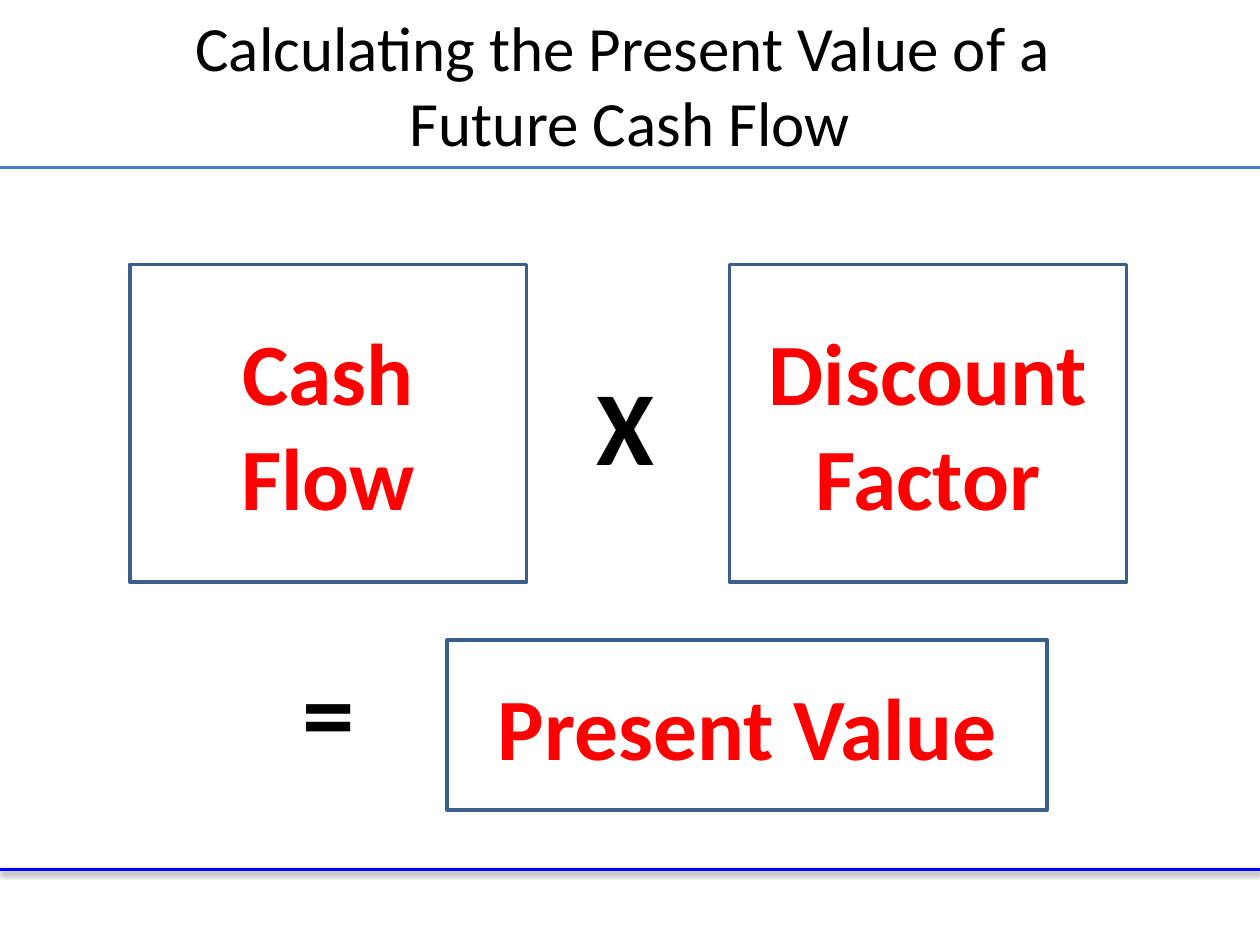
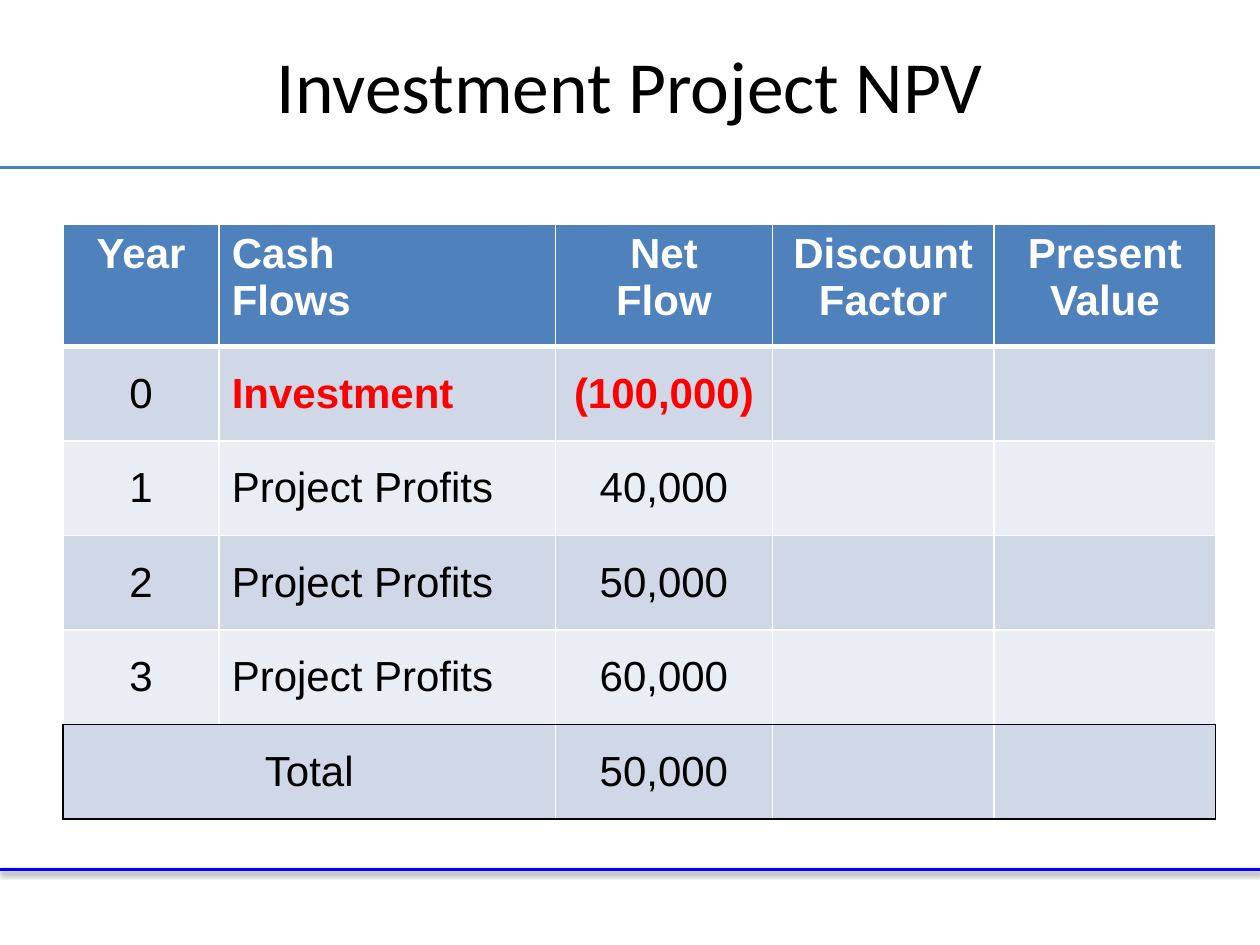
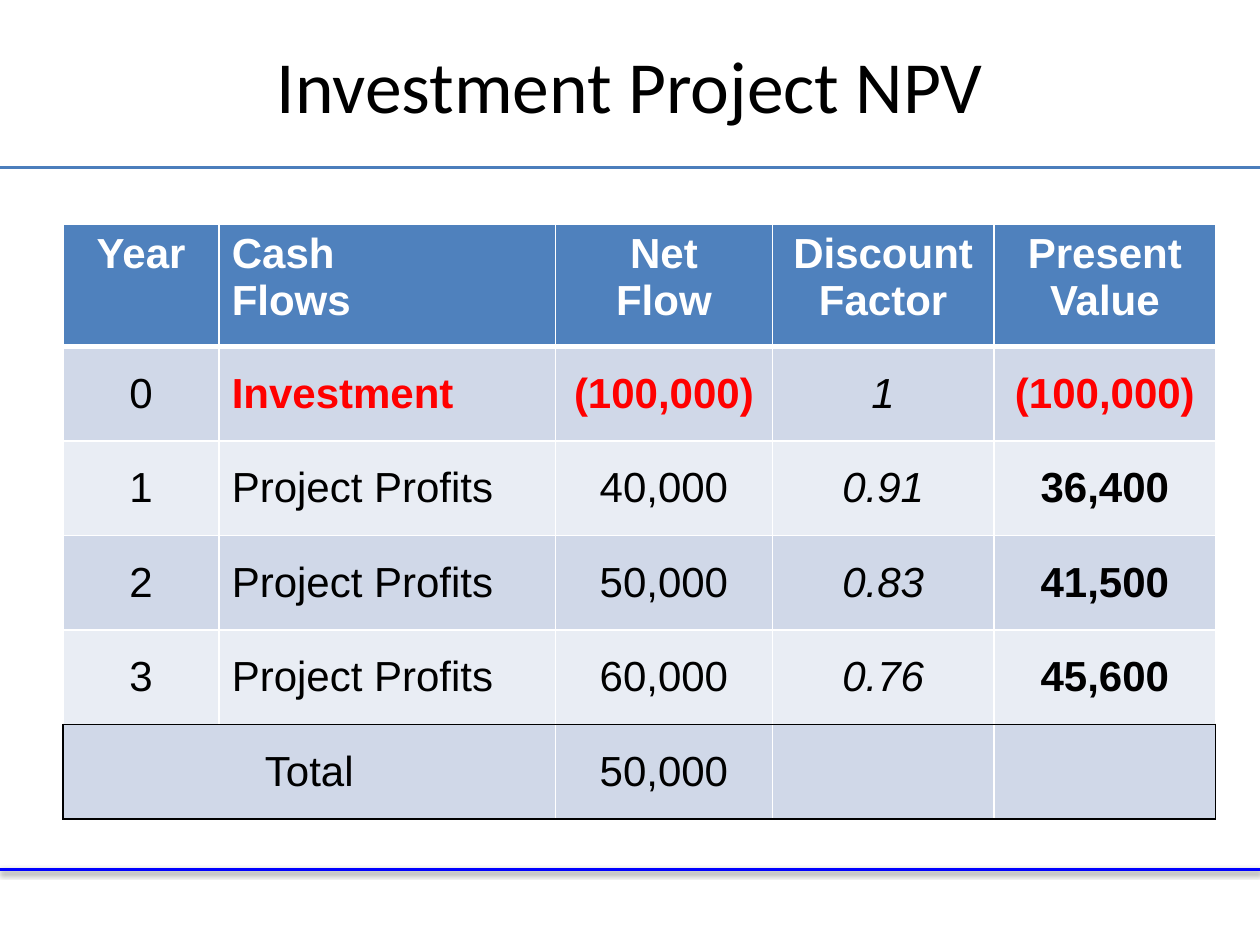
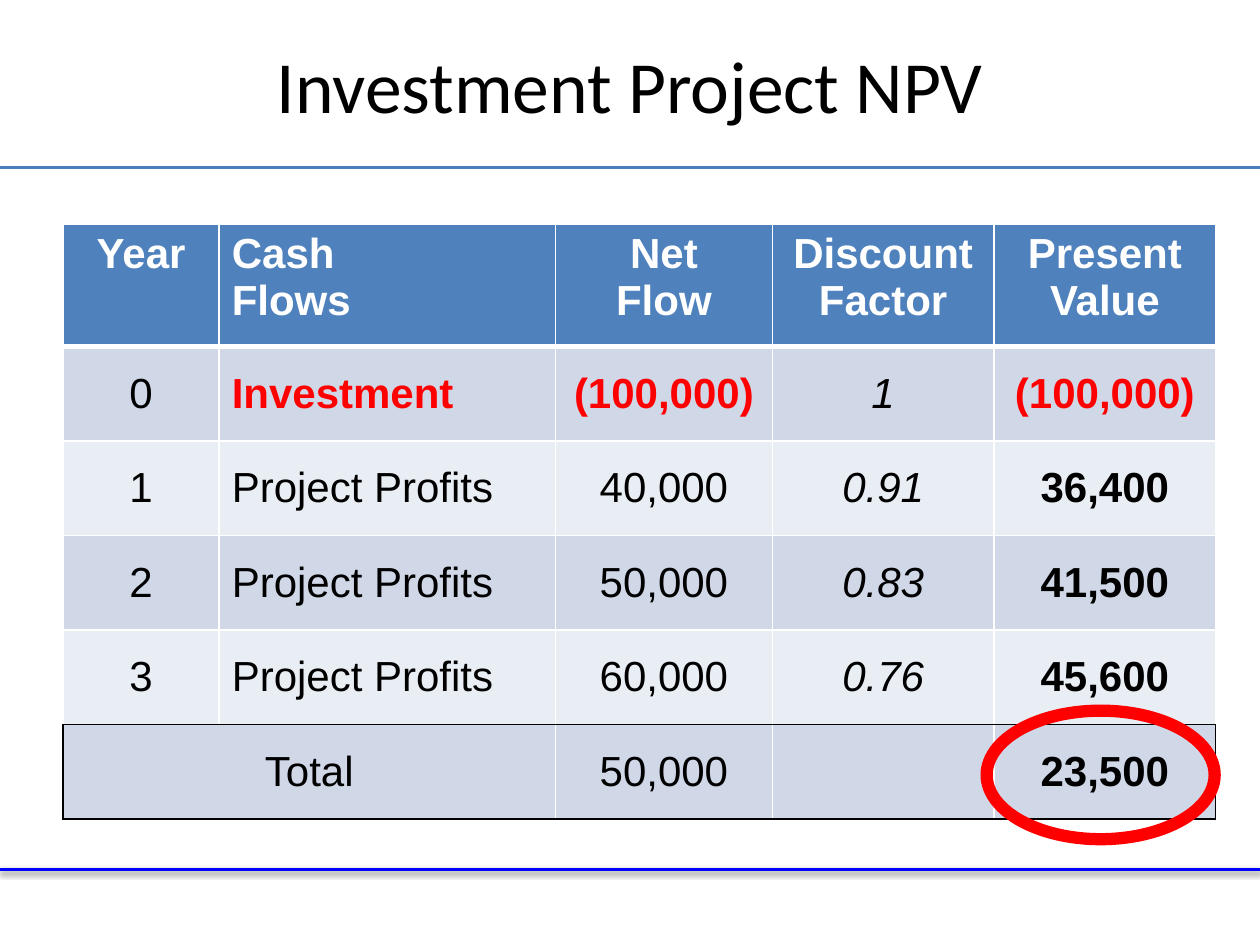
from dataclasses import dataclass

from lxml import etree
from pptx import Presentation
from pptx.dml.color import RGBColor
from pptx.enum.shapes import MSO_CONNECTOR, MSO_SHAPE
from pptx.enum.text import MSO_ANCHOR, MSO_AUTO_SIZE, PP_ALIGN
from pptx.oxml import parse_xml
from pptx.oxml.ns import nsdecls, qn
from pptx.util import Inches, Pt

STRAIGHT = MSO_CONNECTOR.STRAIGHT
RECTANGLE, OVAL = MSO_SHAPE.RECTANGLE, MSO_SHAPE.OVAL
TOP, MIDDLE = MSO_ANCHOR.TOP, MSO_ANCHOR.MIDDLE
LEFT, CENTER = PP_ALIGN.LEFT, PP_ALIGN.CENTER
GROW, FIXED = MSO_AUTO_SIZE.SHAPE_TO_FIT_TEXT, MSO_AUTO_SIZE.NONE
TITLE_ONLY = 5


@dataclass(frozen=True)
class Theme:
    heading_font: str = "Calibri"
    table_font: str = "Arial"
    black: str = "000000"
    white: str = "FFFFFF"
    red: str = "FF0000"
    header_line: str = "4B7EBC"
    footer_line: str = "0000FF"
    box_line: str = "3A5F8C"
    header_fill: str = "4F81BD"
    band_dark: str = "D0D8E8"
    band_light: str = "E9EDF4"
    title_size: int = 42
    long_title_size: int = 36
    box_size: int = 50
    operator_size: int = 60
    table_size: int = 24


THEME = Theme()


@dataclass(frozen=True)
class Box:
    """A region in inches; region() takes percentages of it."""
    left: float
    top: float
    width: float
    height: float

    def region(self, left, top, width, height):
        return Box(self.left + self.width * left / 100,
                   self.top + self.height * top / 100,
                   self.width * width / 100, self.height * height / 100)

    def place(self):
        return [Inches(v) for v in (self.left, self.top, self.width, self.height)]


SLIDE = Box(0, 0, 10, 7.5)
TITLE = SLIDE.region(5, 1.07, 90, 15.6)
BODY = SLIDE.region(0, 17.73, 100, 74.27)   # between the two rules

# Relative sizes of the table grid
COLUMNS = [1.24, 2.67, 1.72, 1.76, 1.76]
ROWS = [0.97] + [0.75] * 5
TEXT_COLUMN, FACTOR_COLUMN, VALUE_COLUMN = 1, 3, 4

HEADER = ["Year", "Cash\nFlows", "Net\nFlow", "Discount\nFactor", "Present\nValue"]
FLOWS = [
    ["0", "Investment", "(100,000)", "1", "(100,000)"],
    ["1", "Project Profits", "40,000", "0.91", "36,400"],
    ["2", "Project Profits", "50,000", "0.83", "41,500"],
    ["3", "Project Profits", "60,000", "0.76", "45,600"],
]
TOTAL = ["Total", "", "50,000", "", "23,500"]


# --- Text and lines ---

def add_run(paragraph, text, font, size, color, bold=False, italic=False):
    run = paragraph.add_run()
    run.text = text
    run.font.name = font
    run.font.size = Pt(size)
    run.font.color.rgb = RGBColor.from_string(color)
    run.font.bold = bold
    run.font.italic = italic


def write_lines(frame, text, align, **style):
    for index, line in enumerate(text.split("\n")):
        paragraph = frame.add_paragraph() if index else frame.paragraphs[0]
        paragraph.alignment = align
        add_run(paragraph, line, **style)


def set_line(shape, color, width):
    shape.line.color.rgb = RGBColor.from_string(color)
    shape.line.width = Pt(width)


def add_rule(slide, layout, y, color, width, shadow=False):
    """Draw a full-width rule and hand it to the shared layout."""
    rule = slide.shapes.add_connector(
        STRAIGHT, 0, Inches(y), Inches(SLIDE.width), Inches(y))
    set_line(rule, color, width)
    effects = etree.SubElement(rule.element.spPr, qn("a:effectLst"))
    if shadow:
        effects.append(parse_xml(
            f'<a:outerShdw {nsdecls("a")} blurRad="{Pt(3.1)}" dist="{Pt(1.6)}" '
            f'dir="5400000" rotWithShape="0"><a:srgbClr val="{THEME.black}">'
            '<a:alpha val="38000"/></a:srgbClr></a:outerShdw>'))
    layout.shapes.element.append(rule.element)


def add_shared_rules(slide, layout):
    add_rule(slide, layout, BODY.top + BODY.height, THEME.footer_line, 2, shadow=True)
    add_rule(slide, layout, BODY.top, THEME.header_line, 1.75)


def add_titled_slide(presentation, title, size=THEME.title_size):
    slide = presentation.slides.add_slide(presentation.slide_layouts[TITLE_ONLY])
    shape = slide.shapes.title
    shape.left, shape.top, shape.width, shape.height = TITLE.place()
    frame = shape.text_frame
    frame.auto_size = FIXED
    frame.word_wrap = True
    frame.vertical_anchor = MIDDLE
    paragraph = frame.paragraphs[0]
    paragraph.alignment = CENTER
    for index, line in enumerate(title.split("\n")):
        if index:
            paragraph.add_line_break()
        add_run(paragraph, line, THEME.heading_font, size, THEME.black)
    return slide


# --- Formula slide ---

def add_term(slide, box, text):
    shape = slide.shapes.add_shape(RECTANGLE, *box.place())
    shape.shadow.inherit = False
    shape.fill.solid()
    shape.fill.fore_color.rgb = RGBColor.from_string(THEME.white)
    set_line(shape, THEME.box_line, 2)
    shape.text_frame.word_wrap = True
    shape.text_frame.vertical_anchor = MIDDLE
    write_lines(shape.text_frame, text, CENTER, font=THEME.heading_font,
                size=THEME.box_size, color=THEME.red, bold=True)


def add_operator(slide, box, text):
    frame = slide.shapes.add_textbox(*box.place()).text_frame
    frame.word_wrap = True
    frame.auto_size = GROW
    write_lines(frame, text, CENTER, font=THEME.heading_font,
                size=THEME.operator_size, color=THEME.black, bold=True)


def add_formula(slide, box):
    add_term(slide, box.region(10.3, 13.82, 31.5, 45.24), "Cash\nFlow")
    add_operator(slide, box.region(45.3, 26.57, 8.7, 19.93), "X")
    add_term(slide, box.region(57.9, 13.82, 31.5, 45.24), "Discount Factor")
    add_operator(slide, box.region(21.7, 67.32, 8.7, 19.93), "=")
    add_term(slide, box.region(35.5, 67.32, 47.6, 24.24), "Present Value")


# --- Net present value table ---

def cell_borders(row, column):
    """Colour and width of each side, in the order the file format needs."""
    last_row, last_column = len(ROWS) - 1, len(COLUMNS) - 1
    total = row == last_row
    black, white = THEME.black, THEME.white
    return {
        "lnL": (black if total and column == 0 else white, 1),
        "lnR": (black if total and column == last_column else white, 1),
        "lnT": (black if total else white, 3 if row == 1 else 1),
        "lnB": (black if row >= last_row - 1 else white, 3 if row == 0 else 1),
    }


def format_cell(cell, row, column):
    properties = cell._tc.get_or_add_tcPr()
    for side, (color, width) in cell_borders(row, column).items():
        properties.append(parse_xml(
            f'<a:{side} {nsdecls("a")} w="{Pt(width)}"><a:solidFill>'
            f'<a:srgbClr val="{color}"/></a:solidFill></a:{side}>'))
    if row == 0:
        fill = THEME.header_fill
    else:
        fill = THEME.band_dark if row % 2 else THEME.band_light
    cell.fill.solid()
    cell.fill.fore_color.rgb = RGBColor.from_string(fill)
    cell.vertical_anchor = MIDDLE if row else TOP


def cell_style(row, column):
    investment = row == 1 and column in (1, 2, VALUE_COLUMN)
    if row == 0:
        color = THEME.white
    else:
        color = THEME.red if investment else THEME.black
    return {"font": THEME.table_font, "size": THEME.table_size, "color": color,
            "bold": row == 0 or investment or column == VALUE_COLUMN,
            "italic": row > 0 and column == FACTOR_COLUMN}


def add_npv_table(slide, box, show_values, show_total):
    """Fill the box with the table; return the box of its last cell."""
    table = slide.shapes.add_table(len(ROWS), len(COLUMNS), *box.place()).table
    widths = [box.width * share / sum(COLUMNS) for share in COLUMNS]
    heights = [box.height * share / sum(ROWS) for share in ROWS]
    for column, width in zip(table.columns, widths):
        column.width = Inches(width)
    for row, height in zip(table.rows, heights):
        row.height = Inches(height)

    for row, texts in enumerate([HEADER, *FLOWS, TOTAL]):
        is_total = row == len(ROWS) - 1
        shown = row == 0 or (show_total if is_total else show_values)
        for column, text in enumerate(texts):
            cell = table.cell(row, column)
            format_cell(cell, row, column)
            if text and (shown or column < FACTOR_COLUMN):
                align = LEFT if column == TEXT_COLUMN else CENTER
                write_lines(cell.text_frame, text, align, **cell_style(row, column))
    total_row = len(ROWS) - 1
    table.cell(total_row, 0).merge(table.cell(total_row, 1))
    return Box(box.left + sum(widths[:-1]), box.top + sum(heights[:-1]),
               widths[-1], heights[-1])


def add_highlight(slide, cell_box):
    ring = slide.shapes.add_shape(
        OVAL, *cell_box.region(-3.4, -14.67, 102.84, 136).place())
    ring.shadow.inherit = False
    ring.fill.background()
    set_line(ring, THEME.red, 7)


def add_npv_slide(presentation, show_values=False, show_total=False):
    slide = add_titled_slide(presentation, "Investment Project NPV")
    total_box = add_npv_table(slide, BODY.region(5, 8.08, 91.5, 84.74),
                              show_values, show_total)
    if show_total:
        add_highlight(slide, total_box)


def main():
    presentation = Presentation()
    presentation.slide_width = Inches(SLIDE.width)
    presentation.slide_height = Inches(SLIDE.height)

    formula_slide = add_titled_slide(
        presentation, "Calculating the Present Value of a \nFuture Cash Flow",
        THEME.long_title_size)
    add_shared_rules(formula_slide, formula_slide.slide_layout)
    add_formula(formula_slide, BODY)

    add_npv_slide(presentation)
    add_npv_slide(presentation, show_values=True)
    add_npv_slide(presentation, show_values=True, show_total=True)
    presentation.save("out.pptx")


if __name__ == "__main__":
    main()
